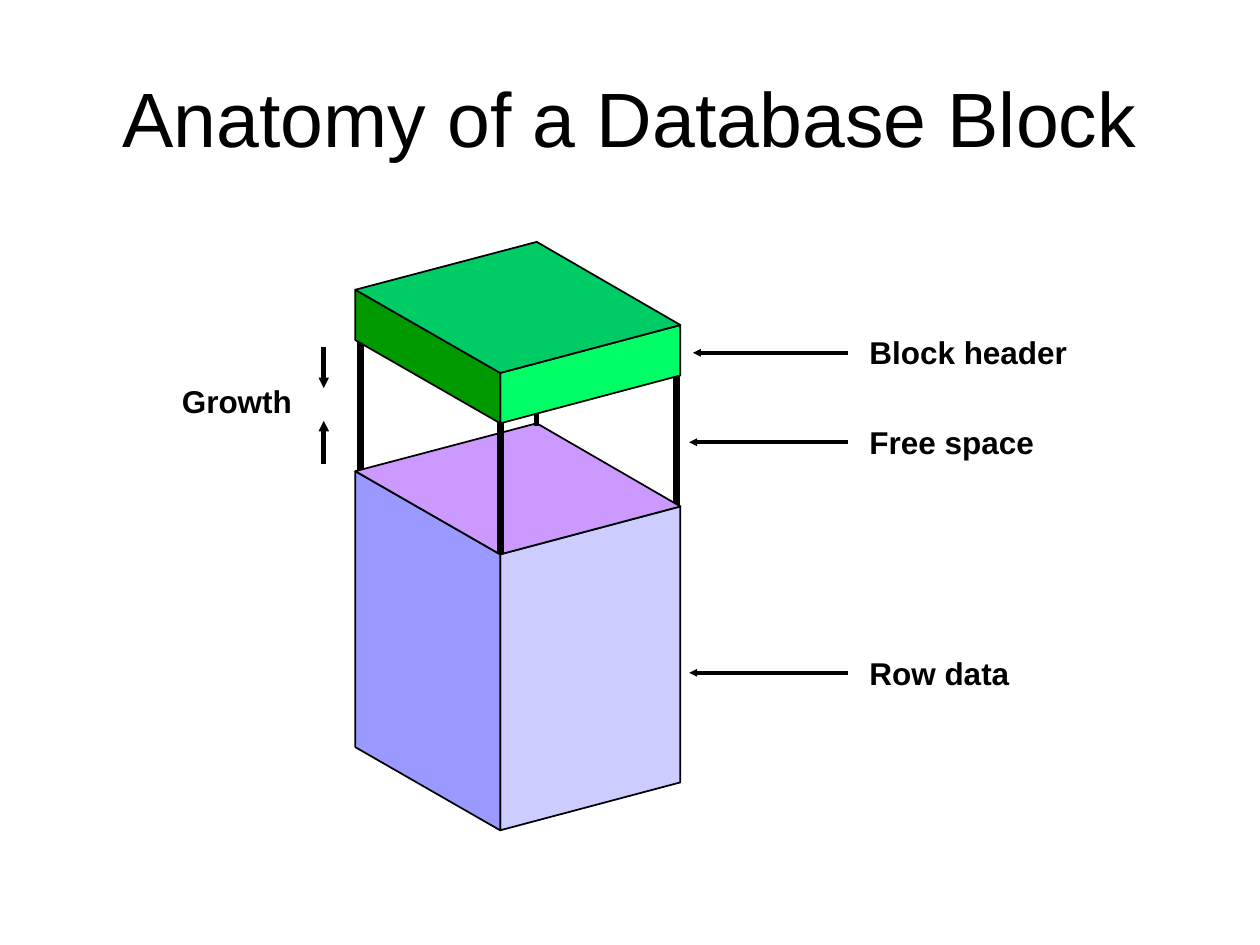
from lxml import etree
from pptx import Presentation
from pptx.dml.color import RGBColor
from pptx.enum.shapes import MSO_CONNECTOR
from pptx.enum.text import MSO_ANCHOR, MSO_AUTO_SIZE, PP_ALIGN
from pptx.oxml.ns import qn
from pptx.util import Inches, Pt

STRAIGHT = MSO_CONNECTOR.STRAIGHT
MIDDLE = MSO_ANCHOR.MIDDLE
FIT_SHAPE = MSO_AUTO_SIZE.SHAPE_TO_FIT_TEXT
LEFT, CENTER = PP_ALIGN.LEFT, PP_ALIGN.CENTER

BLACK = "000000"
FONT = "Arial"

# Corners of the block seen from above: x, and drop below the back corner
BACK, LEFT_CORNER = (4.26, 0), (2.82, 0.38)
RIGHT_CORNER, FRONT = (5.4, 0.66), (3.97, 1.04)


def color(hex_string):
    return RGBColor.from_string(hex_string)


def style_paragraph(paragraph, size, bold, align):
    paragraph.alignment = align
    font = paragraph.font
    font.name, font.size, font.bold = FONT, Pt(size), bold
    font.color.rgb = color(BLACK)


def add_title(slide, text):
    title = slide.shapes.title
    title.left, title.top = Inches(0.5), Inches(0.3)
    title.width, title.height = Inches(9), Inches(1.25)
    frame = title.text_frame
    frame.text = text
    frame.vertical_anchor = MIDDLE
    style_paragraph(frame.paragraphs[0], 44, False, CENTER)


def add_label(slide, text, left, top, width, align=LEFT, wrap=True):
    label = slide.shapes.add_textbox(
        Inches(left), Inches(top), Inches(width), Inches(0.39))
    frame = label.text_frame
    frame.margin_left = frame.margin_right = Inches(0.09)
    frame.word_wrap = wrap
    frame.auto_size = FIT_SHAPE
    frame.text = text
    style_paragraph(frame.paragraphs[0], 18, True, align)


def add_line(slide, start, end, weight, arrow=False):
    """Draw a black line, with an arrowhead at its end if asked."""
    line = slide.shapes.add_connector(
        STRAIGHT, *(Inches(value) for value in (*start, *end)))
    line.line.color.rgb = color(BLACK)
    line.line.width = Pt(weight)
    properties = line._element.spPr
    if arrow:
        etree.SubElement(properties.find(qn("a:ln")), qn("a:tailEnd"),
                         type="triangle", w="sm", len="sm")
    etree.SubElement(properties, qn("a:effectLst"))


def add_face(slide, corners, fill):
    start, *others = [(Inches(x), Inches(y)) for x, y in corners]
    builder = slide.shapes.build_freeform(*start)
    builder.add_line_segments(others, close=True)
    face = builder.convert_to_shape()
    face.shadow.inherit = False
    face.fill.solid()
    face.fill.fore_color.rgb = color(fill)
    face.line.color.rgb = color(BLACK)
    face.line.width = Pt(1)


def add_prism(slide, top, height, right_fill, left_fill, top_fill):
    """Draw the three visible faces; top is the y of the back corner."""
    def at(corner, drop=0):
        x, offset = corner
        return x, top + offset + drop

    for side, fill in ((RIGHT_CORNER, right_fill), (LEFT_CORNER, left_fill)):
        add_face(slide, [at(side), at(side, height),
                         at(FRONT, height), at(FRONT)], fill)
    add_face(slide, [at(LEFT_CORNER), at(BACK),
                     at(RIGHT_CORNER), at(FRONT)], top_fill)


def add_post(slide, x, top, bottom, weight=4):
    add_line(slide, (x, top), (x, bottom), weight)


def add_block(slide):
    add_post(slide, 2.86, 2.68, 3.75)
    add_post(slide, 5.37, 2.98, 4.01)
    add_prism(slide, 3.36, 2.19, "CCCCFF", "9999FF", "CC99FF")
    add_post(slide, 3.97, 3.34, 4.4)
    add_post(slide, 4.26, 2.62, 3.38, weight=3)
    add_prism(slide, 1.92, 0.4, "00FF66", "009900", "00CC66")


def main():
    presentation = Presentation()
    presentation.slide_width = Inches(10)
    presentation.slide_height = Inches(7.5)
    slide = presentation.slides.add_slide(presentation.slide_layouts[5])

    add_title(slide, "Anatomy of a Database Block")
    add_block(slide)

    parts = (
        ("Block header", 2.59, 1.83, 2.8, 5.5),
        ("Free space", 3.31, 1.68, 3.51, 5.47),
        ("Row data", 5.14, 1.39, 5.34, 5.47),
    )
    for text, top, width, arrow_y, arrow_tip in parts:
        add_label(slide, text, 6.81, top, width)
        add_line(slide, (6.73, arrow_y), (arrow_tip, arrow_y), 2.25, arrow=True)

    add_label(slide, "Growth", 1.34, 2.98, 1.08, align=CENTER, wrap=False)
    for start_y, tip_y in ((2.75, 3.08), (3.68, 3.34)):
        add_line(slide, (2.57, start_y), (2.57, tip_y), 3, arrow=True)

    presentation.save("out.pptx")


if __name__ == "__main__":
    main()
